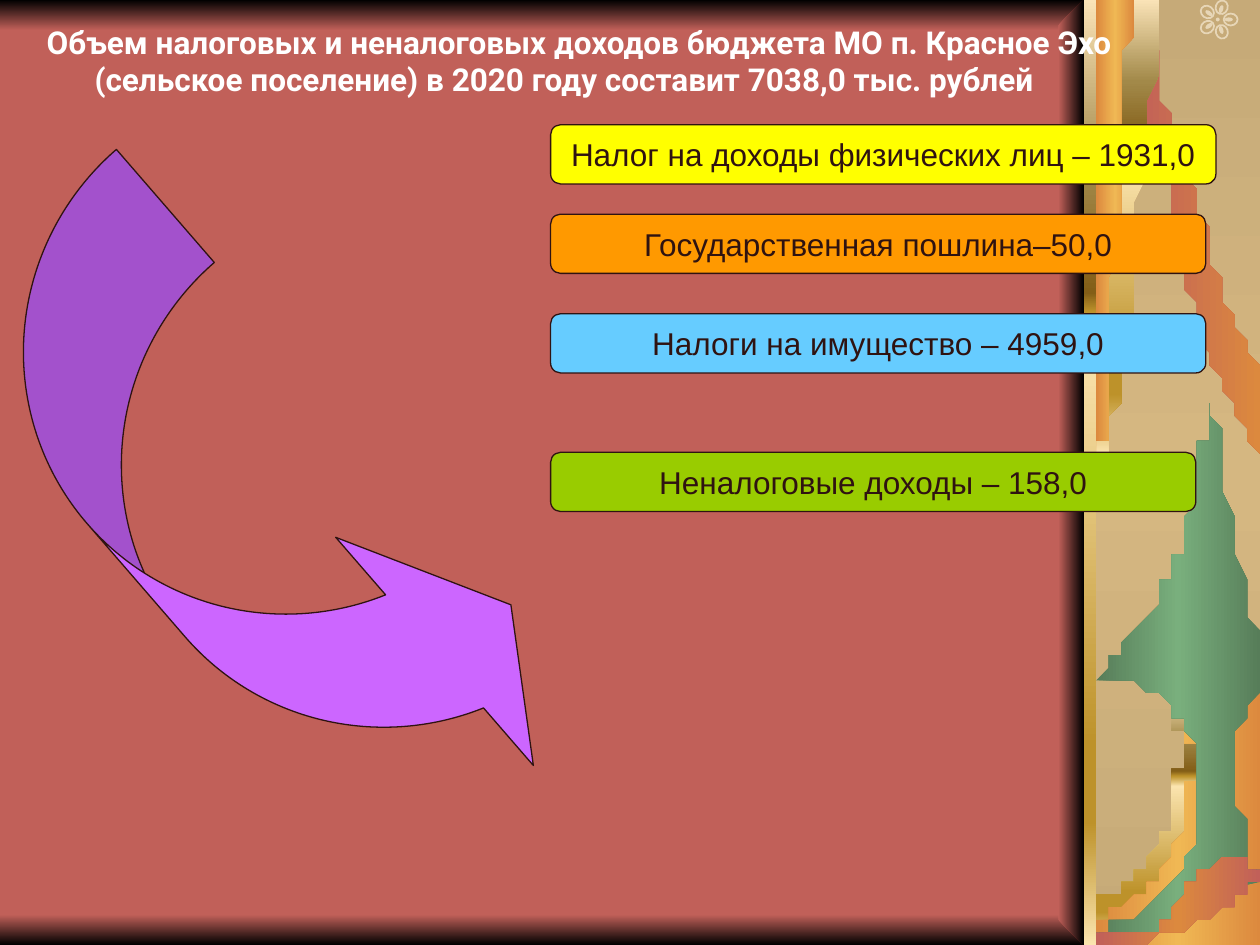
from math import cos, sin, radians
from pptx import Presentation
from pptx.dml.color import RGBColor
from pptx.enum.shapes import MSO_SHAPE as Kind
from pptx.enum.text import MSO_ANCHOR as Anchor, MSO_AUTO_SIZE as Auto, PP_ALIGN as Align
from pptx.oxml import parse_xml
from pptx.oxml.ns import nsdecls, qn
from pptx.util import Inches, Pt

# The slide is a grid of 100 columns by 75 rows
COLS, ROWS = 100, 75
CELL = Inches(0.1)

tone = RGBColor.from_string
RED, BLACK, WHITE, INK = map(tone, ("C16059", "000000", "FFFFFF", "2F1311"))
CREAM, SAND, WHEAT = map(tone, ("E7D6B7", "C6AA78", "D5B781"))
RUST, AMBER, MOSS, LEAF = map(tone, ("DC893E", "F0B854", "577D59", "79AF7D"))
PALE, GOLD, SHINE, OLIVE, BROWN = map(
    tone, ("FAE3B7", "BD922A", "FBE4AE", "A28949", "835E17"))
YELLOW, ORANGE, BLUE, GREEN, VIOLET = map(
    tone, ("FFFF00", "FF9900", "66CCFF", "99CC00", "CC66FF"))


def blend(angle, *tones):
    """A gradient with evenly spaced colours."""
    gap = 100 // (len(tones) - 1)
    return angle, [(n * gap, shade) for n, shade in enumerate(tones)]


METAL = (90, [(0, PALE), (18, OLIVE), (31, BROWN), (33, GOLD), (37, SHINE),
              (79, GOLD), (87, GOLD), (100, SHINE)])
FLAME = blend(0, RUST, AMBER, RUST)

# Ornament in panel cells: each outline is a chain of smooth runs
RIBBON = [(0, 36.4), (1, 34.6), (2.5, 25.4), (3.9, 11.8), (5.5, 0)]
LOOP = [(0, 71), (2.4, 70), (5.4, 66), (6.5, 61), (6.4, 56.4)]
HOOP = [(0, 73), (5, 69.5), (7.4, 63), (7.4, 57.6)]
STEM = [[(0, 54), (5, 47), (7.7, 40), (9, 32.4), (10.2, 38), (12.8, 53),
         (11.3, 58), (11.2, 63), (12.6, 69.5)],
        [(8.4, 70.7), (6.4, 73.4), (2, 74.8), (0, 74.5)],
        [(0, 74.5), (6, 70), (8, 65), (8, 60), (4.7, 55), (0, 54)]]
BLUSH = [[(4.4, 4), (6.8, 12.4), (9.8, 22), (13, 30)],
         [(13, 36.5), (8.8, 28), (5.8, 15), (3.5, 5.8), (4.4, 4)]]
PETAL = [[(0, 74.5), (4.5, 73.6), (7.9, 69.7), (10.7, 68.1), (12.5, 70),
          (7.9, 73.4), (2, 74.9), (0, 74.5)]]

TITLE = ("Объем налоговых и неналоговых доходов бюджета МО п. Красное Эхо "
         "(сельское поселение) в 2020 году составит 7038,0 тыс. рублей")
# Row, width, colour and wording of each income bar
BARS = [(9.9, 52.8, YELLOW, "Налог на доходы физических лиц – 1931,0"),
        (17, 52, ORANGE, "Государственная пошлина–50,0"),
        (24.9, 52, BLUE, "Налоги на имущество – 4959,0"),
        (35.9, 51.2, GREEN, "Неналоговые доходы – 158,0")]


def cells(*nums):
    return [int(n * CELL) for n in nums]


def paint(shape, fill, line=None, width=0.75):
    """Fill is a colour, a gradient or None; no line unless given."""
    shape.shadow.inherit = False
    if fill is None:
        shape.fill.background()
    else:
        shape.fill.solid()
        if isinstance(fill, RGBColor):
            shape.fill.fore_color.rgb = fill
        else:
            angle, stops = fill
            marks = "".join(f'<a:gs pos="{pos * 1000}"><a:srgbClr val="{shade}"/></a:gs>'
                            for pos, shade in stops)
            old = shape._element.spPr.find(qn("a:solidFill"))
            old.getparent().replace(old, parse_xml(
                f'<a:gradFill rotWithShape="1" {nsdecls("a")}><a:gsLst>{marks}</a:gsLst>'
                f'<a:lin ang="{angle * 60000}" scaled="0"/></a:gradFill>'))
    if line is None:
        shape.line.fill.background()
    else:
        shape.line.color.rgb = line
        shape.line.width = Pt(width)


def block(shapes, kind, box, fill, line=None, width=0.75):
    shape = shapes.add_shape(kind, *cells(*box))
    paint(shape, fill, line, width)
    return shape


def smooth(run, parts=10):
    """Points of a Catmull-Rom curve through the run."""
    ends = [run[0], *run, run[-1]]
    pts = [run[0]]
    for a, b, c, d in zip(ends, ends[1:], ends[2:], ends[3:]):
        for n in range(1, parts + 1):
            t = n / parts
            pts.append(tuple(
                q + t / 2 * (r - p + t * (2 * p - 5 * q + 4 * r - s
                                          + t * (3 * (q - r) + s - p)))
                for p, q, r, s in zip(a, b, c, d)))
    return pts


def outline(shapes, origin, runs, fill):
    left, top = origin
    pts = [(x + left, y + top) for run in runs for x, y in smooth(run)]
    pen = shapes.build_freeform(*pts[0], scale=CELL)
    pen.add_line_segments(pts[1:], close=True)
    paint(pen.convert_to_shape(), fill)


def flower(shapes, box):
    left, top, wide, high = box
    mid, row = left + wide / 2, top + high / 2

    def disc(reach, angle, long, short, fill, line=None):
        x = mid + reach * wide * cos(radians(angle))
        y = row + reach * high * sin(radians(angle))
        dot = block(shapes, Kind.OVAL, (x - long / 2, y - short / 2, long, short),
                    fill, line, 1)
        dot.rotation = angle

    for angle in range(0, 360, 72):
        disc(0.33, angle, 1.1, 0.95, None, CREAM)
        disc(0.28, angle, 0.65, 0.33, CREAM)
    disc(0, 0, 0.3, 0.3, CREAM)


def panel(shapes, box):
    left, top, wide, high = box
    block(shapes, Kind.RECTANGLE, box, blend(90, SAND, WHEAT, SAND))
    flower(shapes, (left + 8.1, top, 3.1, 3.1))
    floor = [[(wide, high)], [(0, high)]]
    slim = [(x / 2, y) for x, y in RIBBON]
    for fill, runs in [(METAL, [LOOP, [(wide, 55)], *floor]),
                       (FLAME, [HOOP, [(wide, 53)], *floor]),
                       (blend(0, MOSS, LEAF, MOSS), STEM),
                       (blend(0, RED, RUST), BLUSH),
                       (METAL, [RIBBON, [(0, 0)]]),
                       (FLAME, [slim, [(0, 0)]])]:
        outline(shapes, (left, top), runs, fill)
    block(shapes, Kind.RECTANGLE, (left - 1, top, 1, high), METAL)
    outline(shapes, (left, top), PETAL, blend(0, RED, RUST, RED))


def edges(shapes, box):
    """Dark borders along the top, bottom and right."""
    left, top, wide, high = box
    deep = 2.4
    block(shapes, Kind.RECTANGLE, (left, top + high - deep, wide, deep), blend(90, RED, BLACK))
    block(shapes, Kind.RECTANGLE, (left, top, wide, deep), blend(90, BLACK, RED))
    side = [[(deep, 0)], [(0, deep)], [(0, high - deep)], [(deep, high)]]
    outline(shapes, (left + wide - deep, top), side, blend(0, RED, BLACK))


def style(font, name, shade, bold=False):
    font.name, font.size, font.bold = name, Pt(18), bold
    font.color.rgb = shade


def heading(slide, box):
    title = slide.shapes.title
    slide.shapes._spTree.append(title._element)  # bring above the backdrop
    title.left, title.top, title.width, title.height = cells(*box)
    frame = title.text_frame
    frame.text = TITLE
    frame.word_wrap, frame.auto_size = True, Auto.NONE
    frame.vertical_anchor = Anchor.TOP
    para = frame.paragraphs[0]
    para.alignment = Align.LEFT
    props = para._p.get_or_add_pPr()
    props.set("marL", str(Inches(0.38)))
    props.set("indent", str(-Inches(0.38)))
    style(para.runs[0].font, "Roboto", WHITE, True)


def bars(shapes, left, high):
    for row, wide, shade, text in BARS:
        bar = block(shapes, Kind.FLOWCHART_ALTERNATE_PROCESS, (left, row, wide, high), shade, INK)
        frame = bar.text_frame
        frame.text = text
        frame.word_wrap = False
        frame.vertical_anchor = Anchor.MIDDLE
        para = frame.paragraphs[0]
        para.alignment = Align.CENTER
        style(para.runs[0].font, "Arial", INK)


def arrow(shapes, box):
    bend = block(shapes, Kind.CURVED_RIGHT_ARROW, box, VIOLET, INK)
    bend.rotation = 319.1
    for n, value in enumerate((0.56, 1.13, 0.33)):
        bend.adjustments[n] = value


def main():
    deck = Presentation()
    deck.slide_width, deck.slide_height = cells(COLS, ROWS)
    slide = deck.slides.add_slide(deck.slide_layouts[5])
    slide.background.fill.solid()
    slide.background.fill.fore_color.rgb = RED
    edges(slide.shapes, (0, 0, 86, ROWS))
    panel(slide.shapes, (87, 0, 13, ROWS))
    heading(slide, (2.7, 1.3, 93.7, 65.7))
    bars(slide.shapes, 43.7, 4.7)
    arrow(slide.shapes, (10.2, 11.5, 21.2, 59.8))
    deck.save("out.pptx")


if __name__ == "__main__":
    main()
